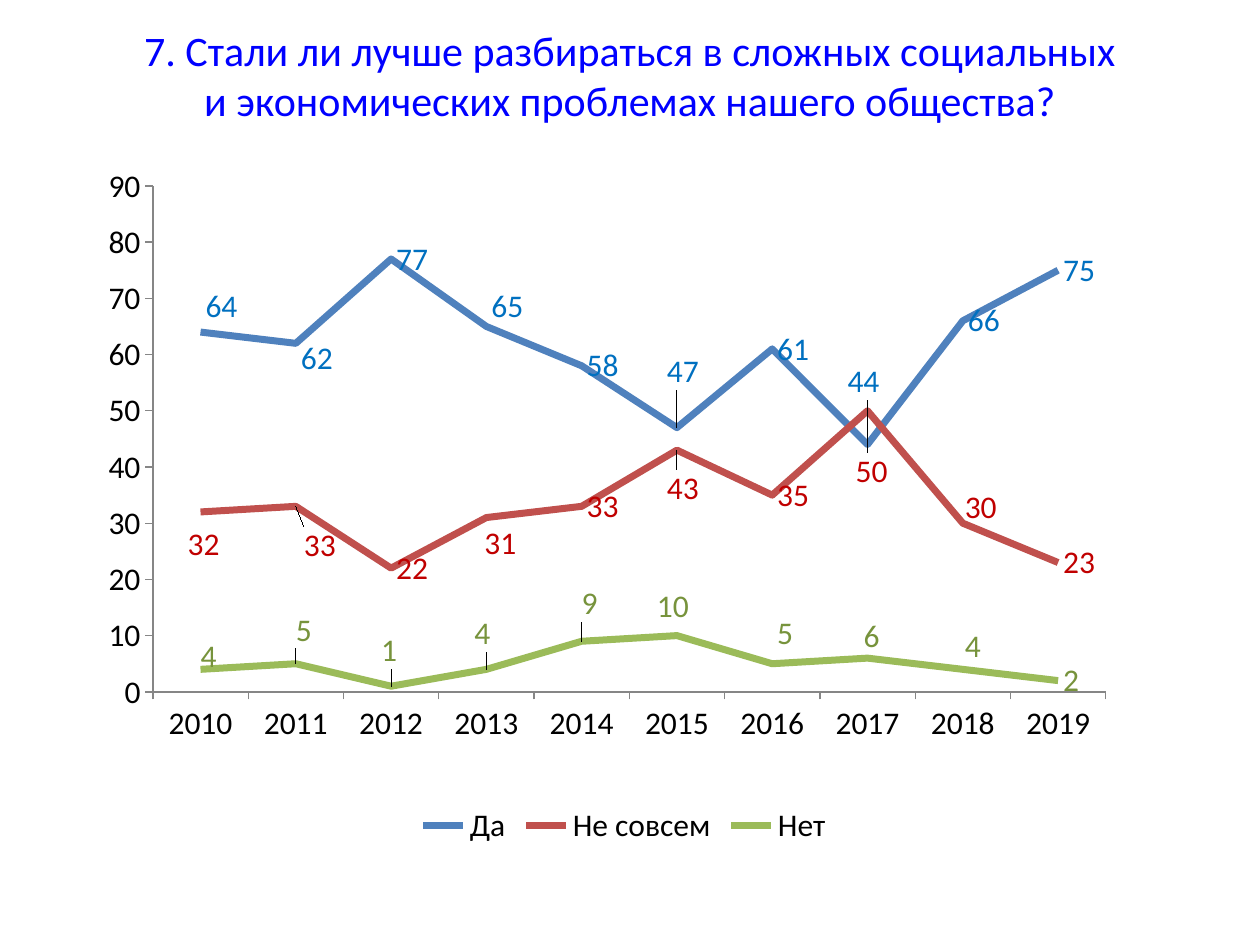
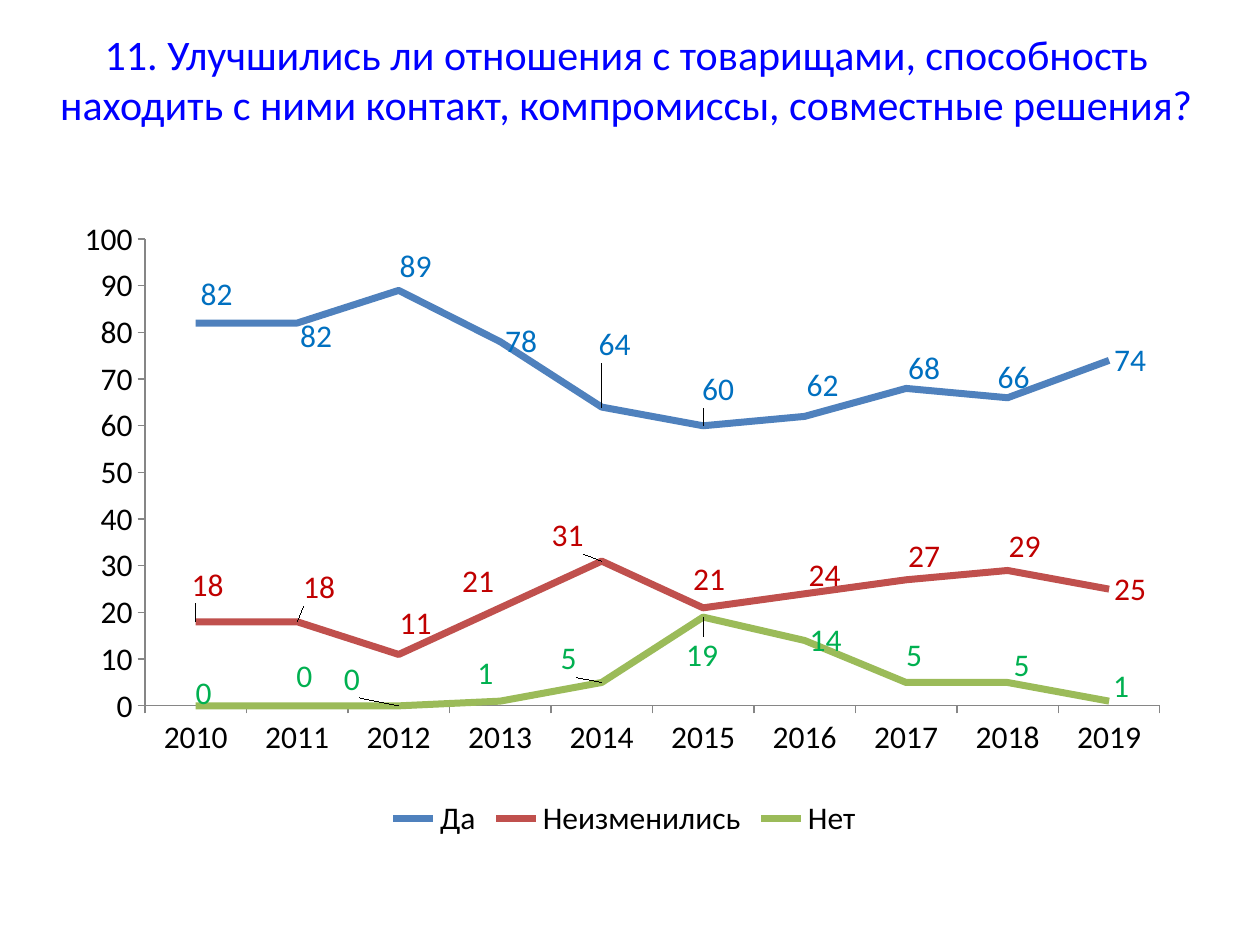
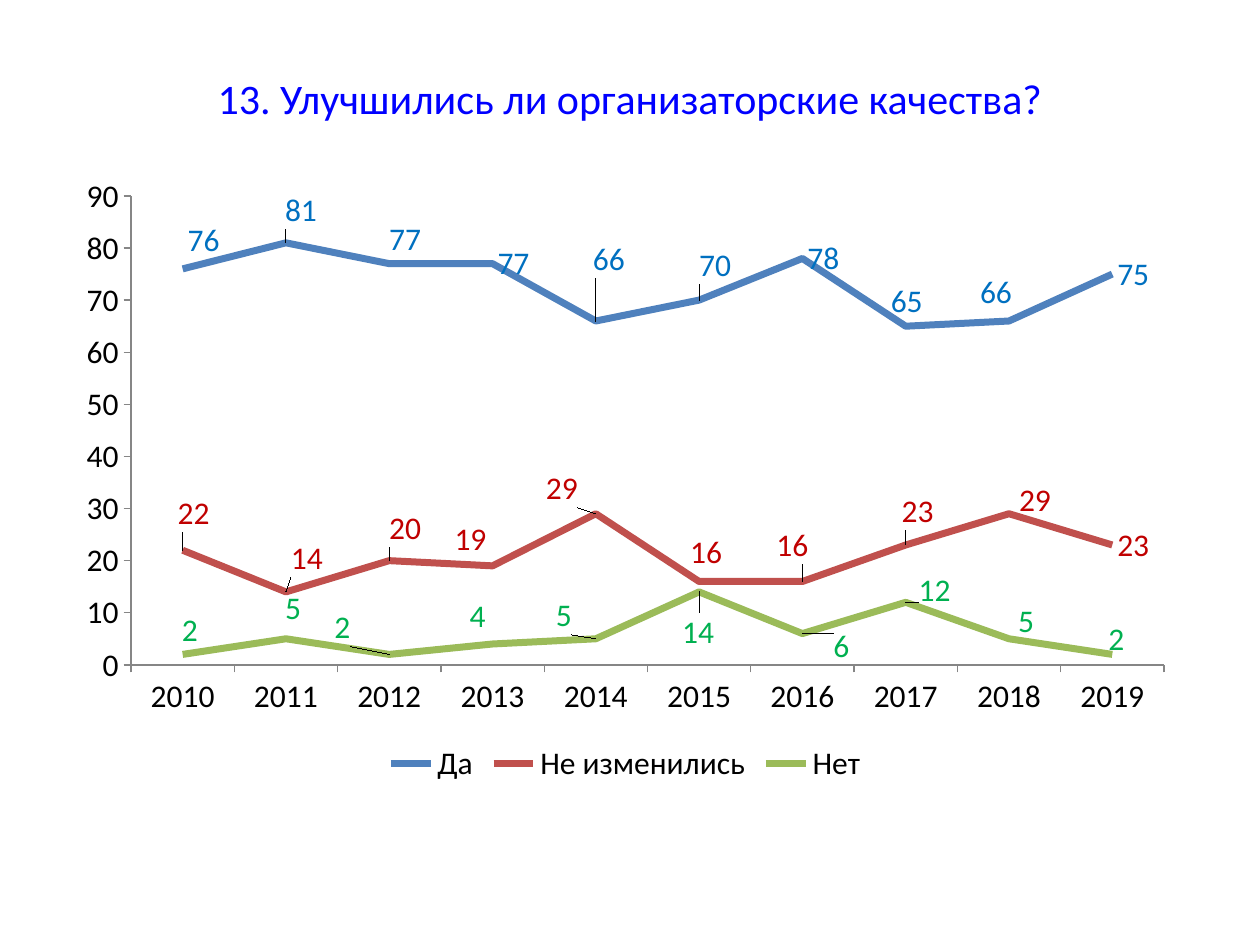
from lxml import etree
from pptx import Presentation
from pptx.chart.data import CategoryChartData
from pptx.dml.color import RGBColor
from pptx.enum.chart import (XL_CHART_TYPE, XL_LABEL_POSITION,
                             XL_LEGEND_POSITION, XL_TICK_MARK)
from pptx.enum.text import MSO_ANCHOR, PP_ALIGN
from pptx.oxml.ns import qn
from pptx.util import Emu, Pt

LINE = XL_CHART_TYPE.LINE
RIGHT = XL_LABEL_POSITION.RIGHT
BOTTOM = XL_LEGEND_POSITION.BOTTOM
OUTSIDE = XL_TICK_MARK.OUTSIDE
NO_TICK = XL_TICK_MARK.NONE

FONT = "Calibri"
TITLE_BLUE = RGBColor(0x00, 0x00, 0xFF)
BLACK = RGBColor(0x00, 0x00, 0x00)
AXIS_GREY = RGBColor(0x86, 0x86, 0x86)
YES_LINE = RGBColor(0x4F, 0x81, 0xBD)
SAME_LINE = RGBColor(0xC0, 0x50, 0x4D)
NO_LINE = RGBColor(0x9B, 0xBB, 0x59)
YES_TEXT = RGBColor(0x00, 0x70, 0xC0)
SAME_TEXT = RGBColor(0xC0, 0x00, 0x00)
OLIVE_TEXT = RGBColor(0x77, 0x93, 0x3C)
GREEN_TEXT = RGBColor(0x00, 0xB0, 0x50)

LINE_COLORS = (YES_LINE, SAME_LINE, NO_LINE)
YEARS = [str(year) for year in range(2010, 2020)]
EMU_PER_PX = 914400 / 126

# Each series: name, values, label shifts in px from the right of the point.
UNDERSTANDING = [
    ("Да", (64, 62, 77, 65, 58, 47, 61, 44, 66, 75),
     {0: (0, -26), 1: (0, 15), 3: (0, -20), 5: (-15, -56), 7: (-25, -63)}),
    ("Не совсем", (32, 33, 22, 31, 33, 43, 35, 50, 30, 23),
     {0: (-18, 32), 1: (3, 39), 3: (-7, 26), 5: (-15, 38), 7: (-17, 61),
      8: (-3, -16)}),
    ("Нет", (4, 5, 1, 4, 9, 10, 5, 6, 4, 2),
     {0: (-5, -13), 1: (-5, -34), 2: (-15, -36), 3: (-17, -36), 4: (-5, -38),
      5: (-25, -29), 6: (0, -30), 7: (-9, -22), 8: (-3, -23)}),
]
RELATIONS = [
    ("Да", (82, 82, 89, 78, 64, 60, 62, 68, 66, 74),
     {0: (0, -29), 1: (-2, 13), 2: (-4, -24), 4: (-8, -63), 5: (-6, -36),
      6: (-3, -31), 7: (-3, -20), 8: (-15, -20)}),
    ("Неизменились", (18, 18, 11, 21, 31, 21, 24, 27, 29, 25),
     {0: (-9, -37), 1: (1, -34), 2: (-4, -31), 3: (-43, -27), 4: (-55, -26),
      5: (-15, -29), 6: (-1, -18), 7: (-3, -23), 8: (-4, -24)}),
    ("Нет", (0, 0, 0, 1, 5, 19, 14, 5, 5, 1),
     {0: (-5, -13), 1: (-6, -30), 2: (-60, -27), 3: (-28, -28), 4: (-46, -24),
      5: (-22, 38), 7: (-5, -27), 8: (1, -17), 9: (-1, -15)}),
]
ORGANISING = [
    ("Да", (76, 81, 77, 77, 66, 70, 78, 65, 66, 75),
     {0: (0, -29), 1: (-6, -32), 2: (-5, -24), 4: (-8, -62), 5: (-5, -35),
      7: (-20, -25), 8: (-34, -29)}),
    ("Не изменились", (22, 14, 20, 19, 29, 16, 16, 23, 29, 23),
     {0: (-10, -37), 1: (0, -34), 2: (-5, -32), 3: (-43, -27), 4: (-55, -25),
      5: (-14, -29), 6: (-31, -36), 7: (-9, -34), 8: (5, -13)}),
    ("Нет", (2, 5, 2, 4, 5, 14, 6, 12, 5, 2),
     {0: (-6, -24), 1: (-6, -30), 2: (-60, -27), 3: (-28, -28), 4: (-45, -23),
      5: (-22, 40), 6: (26, 13), 7: (8, -12), 8: (4, -18), 9: (-9, -15)}),
]


def px(n):
    return Emu(round(n * EMU_PER_PX))


def set_font(font, size, color):
    font.name = FONT
    font.size = Pt(size)
    font.color.rgb = color


def add_title_slide(prs, lines, box):
    s = prs.slides.add_slide(prs.slide_layouts[5])
    title = s.shapes.title
    title.left, title.top, title.width, title.height = map(px, box)
    tf = title.text_frame
    tf.word_wrap = True
    tf.vertical_anchor = MSO_ANCHOR.MIDDLE
    p = tf.paragraphs[0]
    p.alignment = PP_ALIGN.CENTER
    for i, line in enumerate(lines):
        if i:
            p.add_line_break()
        r = p.add_run()
        r.text = line
        set_font(r.font, 24, TITLE_BLUE)
    return s


def manual_layout(**settings):
    """Return a c:layout element holding the given manual settings."""
    layout = etree.Element(qn("c:layout"))
    manual = etree.SubElement(layout, qn("c:manualLayout"))
    for name, value in settings.items():
        etree.SubElement(manual, qn(f"c:{name}")).set("val", str(value))
    return layout


def place_plot(chart, plot, size):
    """Fix the inner plot area, given in px within the chart."""
    x, y, w, h = (round(v / size[i % 2], 4) for i, v in enumerate(plot))
    area = chart.plots[0]._element.getparent()
    for old in area.findall(qn("c:layout")):
        area.remove(old)
    area.insert(0, manual_layout(layoutTarget="inner", xMode="edge",
                                 yMode="edge", x=x, y=y, w=w, h=h))


def style_axes(chart, top):
    for axis in (chart.category_axis, chart.value_axis):
        axis.has_major_gridlines = False
        axis.major_tick_mark = OUTSIDE
        axis.minor_tick_mark = NO_TICK
        axis.format.line.color.rgb = AXIS_GREY
        axis.format.line.width = Pt(0.75)
        set_font(axis.tick_labels.font, 18, BLACK)
    chart.value_axis.minimum_scale = 0
    chart.value_axis.maximum_scale = top
    chart.value_axis.major_unit = 10


def style_series(ser, line_color, text_color, shifts, size):
    ser.smooth = False
    ser.format.line.color.rgb = line_color
    ser.format.line.width = Pt(4)
    labels = ser.data_labels
    labels.show_value = True
    labels.position = RIGHT
    set_font(labels.font, 18, text_color)
    for i, (dx, dy) in shifts.items():
        label = ser.points[i].data_label
        set_font(label.font, 18, text_color)
        label.position = RIGHT
        label._get_or_add_dLbl().insert(1, manual_layout(
            x=round(dx / size[0], 4), y=round(dy / size[1], 4)))


def add_line_chart(s, box, plot, top, answers, no_text):
    data = CategoryChartData()
    data.categories = YEARS
    for name, values, _ in answers:
        data.add_series(name, values)
    chart = s.shapes.add_chart(LINE, *map(px, box), data).chart
    set_font(chart.font, 18, BLACK)
    chart.has_title = False
    chart.has_legend = True
    chart.legend.position = BOTTOM
    chart.legend.include_in_layout = False
    set_font(chart.legend.font, 18, BLACK)
    chart.plots[0].vary_by_categories = False
    size = box[2:]
    place_plot(chart, plot, size)
    style_axes(chart, top)
    text_colors = (YES_TEXT, SAME_TEXT, no_text)
    for ser, line_color, text_color, (_, _, shifts) in zip(
            chart.plots[0].series, LINE_COLORS, text_colors, answers):
        style_series(ser, line_color, text_color, shifts, size)


def main():
    prs = Presentation()
    prs.slide_width, prs.slide_height = px(1260), px(945)

    s = add_title_slide(
        prs, ["7. Стали ли лучше разбираться в сложных социальных",
              "и экономических проблемах нашего общества?"],
        (63, -4, 1134, 158))
    add_line_chart(s, (63, 159, 1123, 692), (90, 27, 953, 506), 90,
                   UNDERSTANDING, OLIVE_TEXT)

    s = add_title_slide(
        prs, ["11. Улучшились ли отношения с товарищами, способность "
              "находить с ними контакт, компромиссы, совместные решения?"],
        (28, 0, 1197, 158))
    add_line_chart(s, (63, 220, 1123, 624), (82, 19, 1015, 467), 100,
                   RELATIONS, GREEN_TEXT)

    s = add_title_slide(
        prs, ["13. Улучшились ли организаторские качества?"],
        (63, 38, 1134, 120))
    add_line_chart(s, (64, 165, 1123, 624), (67, 31, 1033, 469), 90,
                   ORGANISING, GREEN_TEXT)

    prs.save("out.pptx")


if __name__ == "__main__":
    main()
